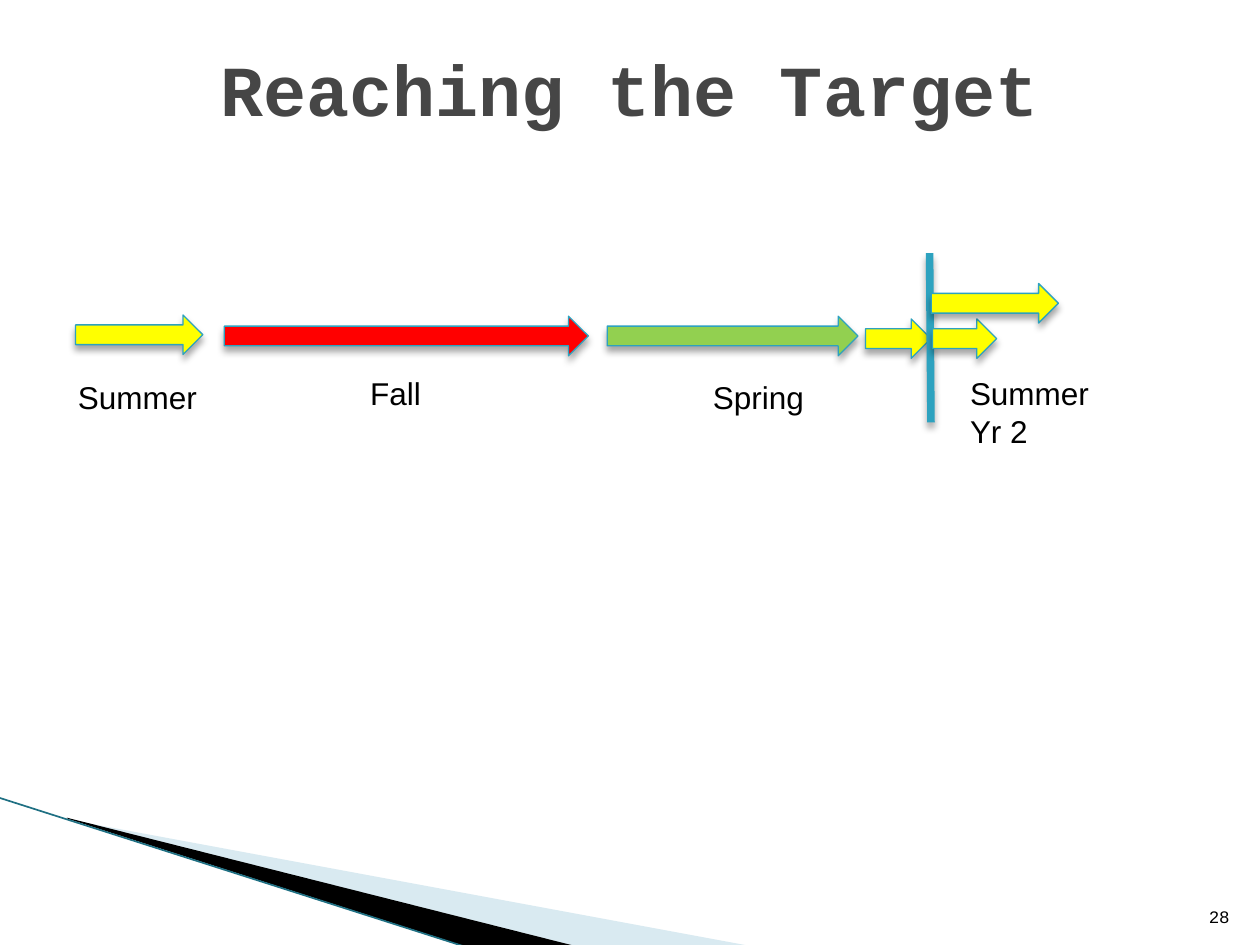
"""Build the "Reaching the Target" timeline slide."""
from lxml.etree import SubElement
from pptx import Presentation
from pptx.dml.color import RGBColor
from pptx.enum.shapes import MSO_CONNECTOR, MSO_SHAPE
from pptx.enum.text import MSO_ANCHOR, PP_ALIGN
from pptx.oxml.ns import qn
from pptx.util import Pt

BLACK = RGBColor(0x00, 0x00, 0x00)
TITLE_GREY = RGBColor(0x46, 0x46, 0x46)
TEAL = RGBColor(0x2D, 0xA2, 0xBF)
DEEP_TEAL = RGBColor(0x1F, 0x70, 0x83)
PALE_BLUE = RGBColor(0xA0, 0xCB, 0xDC)
YELLOW = RGBColor(0xFF, 0xFF, 0x00)
RED = RGBColor(0xFF, 0x00, 0x00)
GREEN = RGBColor(0x92, 0xD0, 0x50)

ARROW_HEIGHT = 22.6
TITLE_FONT = {"name": "Courier New", "size": Pt(41), "bold": True}
LABEL_FONT = {"name": "Arial", "size": Pt(18)}
NUMBER_FONT = {"name": "Courier New", "size": Pt(10)}

SEASONS = [
    (43.2, 180, 72.7, YELLOW),
    (128.2, 180.7, 208, RED),
    (347, 180.7, 143.3, GREEN),
    (494.6, 182.2, 37.4, YELLOW),
]
SECOND_YEAR = [
    (532.8, 182.2, 36.7, YELLOW),
    (532.1, 162, 72.7, YELLOW),
]
LABELS = [
    ("Summer", 37.4, 212.4, 85, 29),
    ("Fall", 204.5, 210.2, 55.4, 29),
    ("Spring", 400.3, 212.4, 72, 29),
    ("Summer Yr 2", 547.2, 210.2, 85, 51),
]


def set_effects(element, shadow):
    """Give the element an effect list, with a soft shadow if wanted."""
    effects = SubElement(element._element.spPr, qn("a:effectLst"))
    if shadow:
        outer = SubElement(effects, qn("a:outerShdw"), blurRad=str(Pt(4)),
                           dist=str(Pt(3)), dir="5400000", rotWithShape="0")
        tint = SubElement(outer, qn("a:srgbClr"), val=str(BLACK))
        SubElement(tint, qn("a:alpha"), val="35000")


def add_arrow(slide, left, top, width, color):
    """Draw one right-pointing time span."""
    arrow = slide.shapes.add_shape(MSO_SHAPE.RIGHT_ARROW, Pt(left), Pt(top),
                                   Pt(width), Pt(ARROW_HEIGHT))
    arrow.fill.solid()
    arrow.fill.fore_color.rgb = color
    arrow.line.color.rgb = TEAL
    arrow.line.width = Pt(0.75)
    set_effects(arrow, shadow=True)


def add_line(slide, start, end, color, weight, shadow=False):
    """Draw a straight line between two points."""
    line = slide.shapes.add_connector(MSO_CONNECTOR.STRAIGHT,
                                      *map(Pt, start + end))
    line.line.color.rgb = color
    line.line.width = Pt(weight)
    set_effects(line, shadow)


def add_wedge(slide, points, color, opacity=100):
    """Draw a filled corner wedge through the points."""
    start, *others = [(Pt(x), Pt(y)) for x, y in points]
    builder = slide.shapes.build_freeform(*start)
    builder.add_line_segments(others, close=True)
    wedge = builder.convert_to_shape()
    wedge.fill.solid()
    wedge.fill.fore_color.rgb = color
    wedge.line.fill.background()
    wedge.shadow.inherit = False
    if opacity < 100:
        tint = wedge._element.spPr.find(qn("a:solidFill"))[0]
        SubElement(tint, qn("a:alpha"), val=str(opacity * 1000))


def add_text(slide, text, left, top, width, height, font, color=BLACK,
             align=PP_ALIGN.LEFT, anchor=MSO_ANCHOR.TOP):
    """Place a wrapped text box with one formatted paragraph."""
    frame = slide.shapes.add_textbox(Pt(left), Pt(top), Pt(width),
                                     Pt(height)).text_frame
    frame.word_wrap = True
    frame.vertical_anchor = anchor
    paragraph = frame.paragraphs[0]
    paragraph.alignment = align
    run = paragraph.add_run()
    run.text = text
    for attribute, value in font.items():
        setattr(run.font, attribute, value)
    run.font.color.rgb = color


def main():
    """Assemble and save the slide."""
    deck = Presentation()
    deck.slide_width, deck.slide_height = Pt(720), Pt(540)
    slide = deck.slides.add_slide(deck.slide_layouts[6])

    add_wedge(slide, [(39.6, 468.5), (428.4, 540.5), (328.3, 540.5),
                      (39.6, 468)], PALE_BLUE, opacity=40)
    add_wedge(slide, [(38.2, 467.3), (329, 540.7), (267.8, 541.4),
                      (38.9, 468)], BLACK)
    add_line(slide, (-0.7, 455.8), (267.1, 541.4), DEEP_TEAL, 0.95)

    add_text(slide, "Reaching the Target", 43.2, 8.6, 633.6, 82.8, TITLE_FONT,
             TITLE_GREY, PP_ALIGN.CENTER, MSO_ANCHOR.MIDDLE)
    for season in SEASONS:
        add_arrow(slide, *season)
    add_line(slide, (531.2, 144.7), (532, 241.4), TEAL, 4.33, shadow=True)
    for label in LABELS:
        add_text(slide, *label, LABEL_FONT)
    for season in SECOND_YEAR:
        add_arrow(slide, *season)
    add_text(slide, "28", 681, 504.7, 28.8, 28.8, NUMBER_FONT,
             align=PP_ALIGN.RIGHT, anchor=MSO_ANCHOR.BOTTOM)

    deck.save("out.pptx")


if __name__ == "__main__":
    main()
